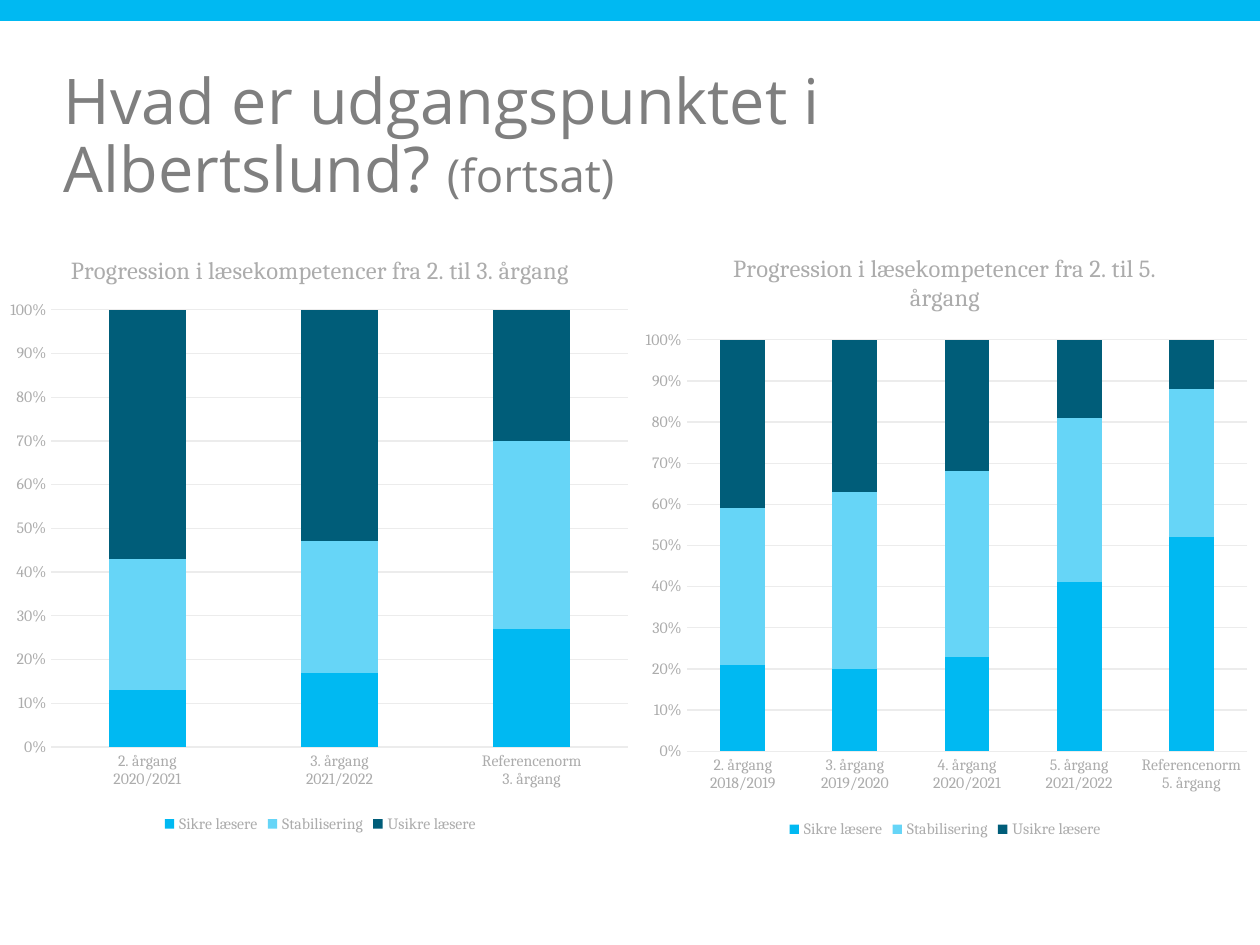
from lxml import etree
from pptx import Presentation
from pptx import util as u
from pptx.chart.data import CategoryChartData
from pptx.dml.color import RGBColor
from pptx.enum import chart as ch, shapes, text
from pptx.oxml import ns

Pt = u.Pt
SKY = RGBColor(0x00, 0xB9, 0xF2)
LIGHT = RGBColor(0x66, 0xD5, 0xF7)
PETROL = RGBColor(0x00, 0x5D, 0x79)
GREY = RGBColor(0x7F, 0x7F, 0x7F)
LABEL = RGBColor(0xAC, 0xAC, 0xAC)
GRID = RGBColor(0xEC, 0xEC, 0xEC)
SERIES = {"Sikre læsere": SKY, "Stabilisering": LIGHT, "Usikre læsere": PETROL}


def format_font(font, size, color, name):
    font.size = Pt(size)
    font.color.rgb = color
    font.name = name
    font.bold = False


def add_run(p, content, size=36, color=GREY, name="Open Sans"):
    r = p.add_run()
    r.text = content
    format_font(r.font, size, color, name)
    return r


def set_plot_layout(chart, box):
    area = chart._chartSpace.chart.plotArea
    for old in area.findall(ns.qn("c:layout")):
        area.remove(old)
    layout = etree.Element(ns.qn("c:layout"))
    manual = etree.SubElement(layout, ns.qn("c:manualLayout"))
    settings = [("layoutTarget", "inner"), ("xMode", "edge"), ("yMode", "edge")]
    settings += zip("xywh", box)
    for tag, value in settings:
        etree.SubElement(manual, ns.qn("c:" + tag)).set("val", str(value))
    area.insert(0, layout)


class Deck:
    chart_font = "Cambria"

    def __init__(self, width, height):
        self.prs = Presentation()
        self.prs.slide_width, self.prs.slide_height = Pt(width), Pt(height)
        self.s = self.prs.slides.add_slide(self.prs.slide_layouts[6])

    def bar(self, x, y, w, h, color):
        sp = self.s.shapes.add_shape(
            shapes.MSO_SHAPE.RECTANGLE, Pt(x), Pt(y), Pt(w), Pt(h))
        sp.shadow.inherit = False
        sp.fill.solid()
        sp.fill.fore_color.rgb = color
        sp.line.fill.background()

    def title(self, x, y, w, h, runs):
        tf = self.s.shapes.add_textbox(Pt(x), Pt(y), Pt(w), Pt(h)).text_frame
        tf.word_wrap = True
        tf.vertical_anchor = text.MSO_ANCHOR.TOP
        tf.margin_left = tf.margin_right = tf.margin_top = tf.margin_bottom = 0
        p = tf.paragraphs[0]
        p.line_spacing = 0.9
        for content, size in runs:
            add_run(p, content, size=size)

    def chart(self, x, y, w, h, heading, cats, rows, plot_box):
        data = CategoryChartData(number_format="General")
        data.categories = cats
        for name, values in zip(SERIES, rows):
            data.add_series(name, values)
        chart = self.s.shapes.add_chart(
            ch.XL_CHART_TYPE.COLUMN_STACKED_100,
            Pt(x), Pt(y), Pt(w), Pt(h), data).chart
        format_font(chart.font, 10, GREY, self.chart_font)

        chart.has_title = True
        p = chart.chart_title.text_frame.paragraphs[0]
        add_run(p, heading, size=14, color=LABEL, name=self.chart_font)
        chart.chart_title.include_in_layout = False

        chart.has_legend = True
        chart.legend.position = ch.XL_LEGEND_POSITION.BOTTOM
        chart.legend.include_in_layout = False
        format_font(chart.legend.font, 9, LABEL, self.chart_font)

        plot = chart.plots[0]
        plot.vary_by_categories = False
        plot.gap_width, plot.overlap = 150, 100
        for series, color in zip(plot.series, SERIES.values()):
            series.format.fill.solid()
            series.format.fill.fore_color.rgb = color

        cat_axis, val_axis = chart.category_axis, chart.value_axis
        for axis in (cat_axis, val_axis):
            axis.major_tick_mark = axis.minor_tick_mark = ch.XL_TICK_MARK.NONE
            format_font(axis.tick_labels.font, 9, LABEL, self.chart_font)
        val_axis.minimum_scale, val_axis.maximum_scale = 0, 1
        val_axis.major_unit = 0.1
        val_axis.tick_labels.number_format = "0%"
        val_axis.tick_labels.number_format_is_linked = False
        val_axis.format.line.fill.background()
        val_axis.has_major_gridlines = True
        for line in (cat_axis.format.line, val_axis.major_gridlines.format.line):
            line.color.rgb = GRID
            line.width = Pt(0.75)
        set_plot_layout(chart, plot_box)


def main():
    deck = Deck(720, 540)
    deck.bar(0, 0, 720, 12, SKY)
    deck.title(36.5, 40, 643.5, 90, [
        ("Hvad er udgangspunktet i Albertslund? ", 36), ("(fortsat)", 26)])
    deck.chart(
        0, 132, 366, 347, "Progression i læsekompetencer fra 2. til 3. årgang",
        ["2. årgang\n2020/2021", "3. årgang\n2021/2022",
         "Referencenorm\n3. årgang"],
        [(13, 17, 27), (30, 30, 43), (57, 53, 30)],
        (0.08, 0.13, 0.9, 0.72))
    deck.chart(
        360, 131, 360, 351, "Progression i læsekompetencer fra 2. til 5. årgang",
        ["2. årgang\n2018/2019", "3. årgang\n2019/2020", "4. årgang\n2020/2021",
         "5. årgang\n2021/2022", "Referencenorm\n5. årgang"],
        [(21, 20, 23, 41, 52), (38, 43, 45, 40, 36), (41, 37, 32, 19, 12)],
        (0.09, 0.18, 0.89, 0.67))
    deck.prs.save("out.pptx")


if __name__ == "__main__":
    main()
